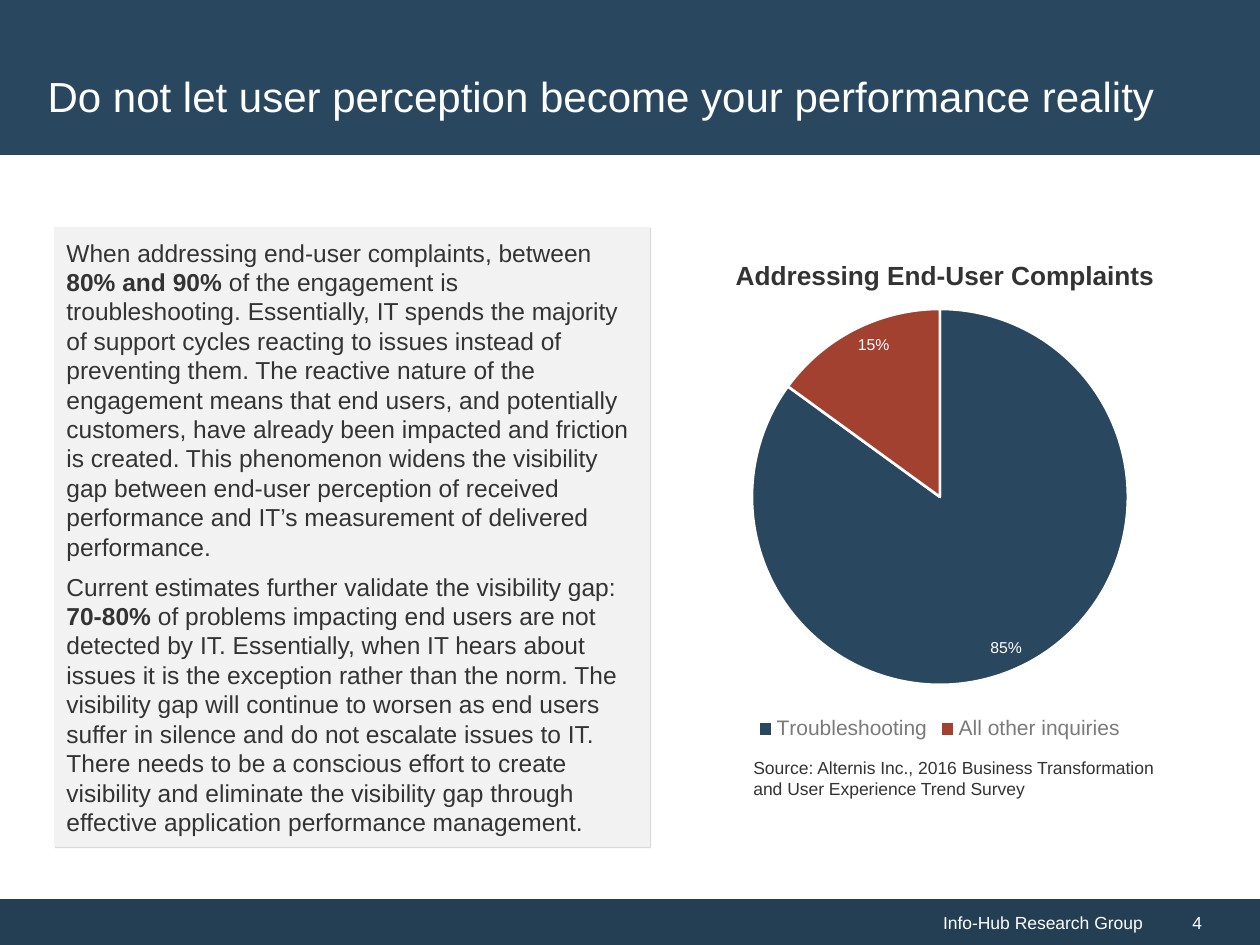
import pptx
import pptx.chart.data
import pptx.dml.color
import pptx.enum.chart
import pptx.enum.shapes
import pptx.enum.text
import pptx.oxml
import pptx.util

# Content
TITLE = "Do not let user perception become your performance reality"
BODY = [
    [("When addressing end-user complaints, between ", False),
     ("80% and 90% ", True),
     ("of the engagement is troubleshooting. Essentially, IT spends the majority of "
      "support cycles reacting to issues instead of preventing them. The reactive nature "
      "of the engagement means that end users, and potentially customers, have already "
      "been impacted and friction is created. This phenomenon widens the visibility gap "
      "between end-user perception of received performance and IT’s measurement of "
      "delivered performance.", False)],
    [("Current estimates further validate the visibility gap: ", False),
     ("70-80% ", True),
     ("of problems impacting end users are not detected by IT. Essentially, when IT hears "
      "about issues it is the exception rather than the norm. The visibility gap will "
      "continue to worsen as end users suffer in silence and do not escalate issues to IT. "
      "There needs to be a conscious effort to create visibility and eliminate the "
      "visibility gap through effective application performance management.", False)],
]
SOURCE = ("Source: Alternis Inc., 2016 Business Transformation "
          "and User Experience Trend Survey")
FOOTER, PAGE_NUMBER = "Info-Hub Research Group", "4"
CHART_TITLE = "Addressing End-User Complaints"
SLICES = [("Troubleshooting", 0.85, "29475F"), ("All other inquiries", 0.15, "A24130")]

# Style and places (left, top, width, height in px)
FONT = "Arial"
NAVY, DARK_NAVY, PALE = "29475F", "243F54", "F2F2F2"
WHITE, INK, GREY = "FFFFFF", "333333", "7A7A7A"
WIDTH, HEIGHT = 1260, 945
FOOT_TOP, NUMBER_LEFT = 899, 1155
HEADER = (0, 0, WIDTH, 155)
TITLE_AREA = (35, 35, 1188, 121)
BODY_AREA = (54, 227, 596, 620)
SOURCE_AREA = (741, 751, 438, 55)
CHART_AREA = (554, 232, 771, 513)
PIE_AREA = (752, 309, 376, 376)
CHART_TITLE_AT = (731, 254)
ANCHOR = pptx.enum.text.MSO_ANCHOR
ALIGN = pptx.enum.text.PP_ALIGN
NS = pptx.oxml.ns.nsdecls


def px(*lengths):
    return [pptx.util.Emu(round(length * 914400 / 126)) for length in lengths]


def color(hex_string):
    return pptx.dml.color.RGBColor.from_string(hex_string)


def style(font, size, hex_string, bold=False):
    font.name, font.size, font.bold = FONT, pptx.util.Pt(size), bold
    font.color.rgb = color(hex_string)


def write(box, paragraphs, size, hex_string, align=ALIGN.LEFT, anchor=ANCHOR.MIDDLE,
          gap=0, indent=0):
    frame = box.text_frame
    frame.word_wrap, frame.vertical_anchor = True, anchor
    for index, spans in enumerate(paragraphs):
        para = frame.add_paragraph() if index else frame.paragraphs[0]
        para.alignment = align
        para.space_before = para.space_after = pptx.util.Pt(gap)
        if indent:
            properties = para._p.get_or_add_pPr()
            properties.set("marL", str(px(indent)[0]))
            properties.set("indent", "0")
        for text, bold in spans:
            span = para.add_run()
            span.text = text
            style(span.font, size, hex_string, bold)


def add_panel(page, area, fill):
    panel = page.shapes.add_shape(pptx.enum.shapes.MSO_SHAPE.RECTANGLE, *px(*area))
    panel.shadow.inherit = False
    panel.fill.solid()
    panel.fill.fore_color.rgb = color(fill)
    panel.line.fill.background()
    return panel


def manual_layout(x, y, w=None, h=None):
    """Chart layout from px on the slide, as fractions of the chart area."""
    left, top, width, height = CHART_AREA
    target = '<c:layoutTarget val="inner"/>' if w else ""
    values = {"x": (x - left) / width, "y": (y - top) / height}
    if w:
        values.update(w=w / width, h=h / height)
    modes = '<c:xMode val="edge"/><c:yMode val="edge"/>'
    parts = "".join(f'<c:{key} val="{value:.4f}"/>' for key, value in values.items())
    return pptx.oxml.parse_xml(
        f'<c:layout {NS("c")}><c:manualLayout>{target}{modes}{parts}'
        '</c:manualLayout></c:layout>')


def set_layout(parent, layout, after=None):
    for old in parent.findall(pptx.oxml.ns.qn("c:layout")):
        parent.remove(old)
    if after is None:
        parent.insert(0, layout)
    else:
        after.addnext(layout)


def add_pie(page):
    data = pptx.chart.data.CategoryChartData(number_format="0%")
    data.categories = [name for name, _, _ in SLICES]
    data.add_series("Series 1", [value for _, value, _ in SLICES])
    chart = page.shapes.add_chart(
        pptx.enum.chart.XL_CHART_TYPE.PIE, *px(*CHART_AREA), data).chart
    style(chart.font, 10, INK)

    # Title and legend
    chart.has_title = True
    span = chart.chart_title.text_frame.paragraphs[0].add_run()
    span.text = CHART_TITLE
    style(span.font, 15, INK, True)
    chart.chart_title.include_in_layout = False
    title = chart.chart_title._element
    set_layout(title, manual_layout(*CHART_TITLE_AT), title.find(pptx.oxml.ns.qn("c:tx")))
    chart.has_legend = True
    chart.legend.position = pptx.enum.chart.XL_LEGEND_POSITION.BOTTOM
    chart.legend.include_in_layout = False
    style(chart.legend.font, 12, GREY)

    # Slices and labels
    plot = chart.plots[0]
    plot.vary_by_categories = True
    set_layout(chart._chartSpace.chart.plotArea, manual_layout(*PIE_AREA))
    for index, (_, _, fill) in enumerate(SLICES):
        piece = plot.series[0].points[index].format
        piece.fill.solid()
        piece.fill.fore_color.rgb = color(fill)
        piece.line.color.rgb = color(WHITE)
        piece.line.width = pptx.util.Pt(1.5)
    labels = plot.series[0].data_labels
    labels.show_value = True
    labels.show_percentage = False
    labels.number_format, labels.number_format_is_linked = "0%", False
    labels.position = pptx.enum.chart.XL_LABEL_POSITION.INSIDE_END
    style(labels.font, 9, WHITE)


def main():
    deck = pptx.Presentation()
    deck.slide_width, deck.slide_height = px(WIDTH, HEIGHT)
    page = deck.slides.add_slide(deck.slide_layouts[5])

    # Footer
    foot_height = HEIGHT - FOOT_TOP
    credit = add_panel(page, (0, FOOT_TOP, NUMBER_LEFT, foot_height), DARK_NAVY)
    write(credit, [[(FOOTER, False)]], 10, WHITE, ALIGN.RIGHT, indent=36)
    number = add_panel(
        page, (NUMBER_LEFT, FOOT_TOP, WIDTH - NUMBER_LEFT, foot_height), DARK_NAVY)
    write(number, [[(PAGE_NUMBER, False)]], 10, WHITE, indent=25)

    # Header band behind the title
    header = add_panel(page, HEADER, NAVY)
    title = page.shapes.title
    title.element.addprevious(header.element)
    title.left, title.top, title.width, title.height = px(*TITLE_AREA)
    write(title, [[(TITLE, False)]], 24, WHITE)

    # Body panel with a faint shadow
    body = add_panel(page, BODY_AREA, PALE)
    write(body, BODY, 14, INK, gap=3)
    effects = body.element.spPr.find(pptx.oxml.ns.qn("a:effectLst"))
    effects.append(pptx.oxml.parse_xml(
        f'<a:outerShdw {NS("a")} blurRad="0" dist="12700" dir="2700000" algn="tl" '
        'rotWithShape="0"><a:srgbClr val="000000"><a:alpha val="14000"/></a:srgbClr>'
        '</a:outerShdw>'))

    # Chart and its source
    source = page.shapes.add_textbox(*px(*SOURCE_AREA))
    write(source, [[(SOURCE, False)]], 10, INK, anchor=ANCHOR.TOP)
    add_pie(page)

    deck.save("out.pptx")


if __name__ == "__main__":
    main()
